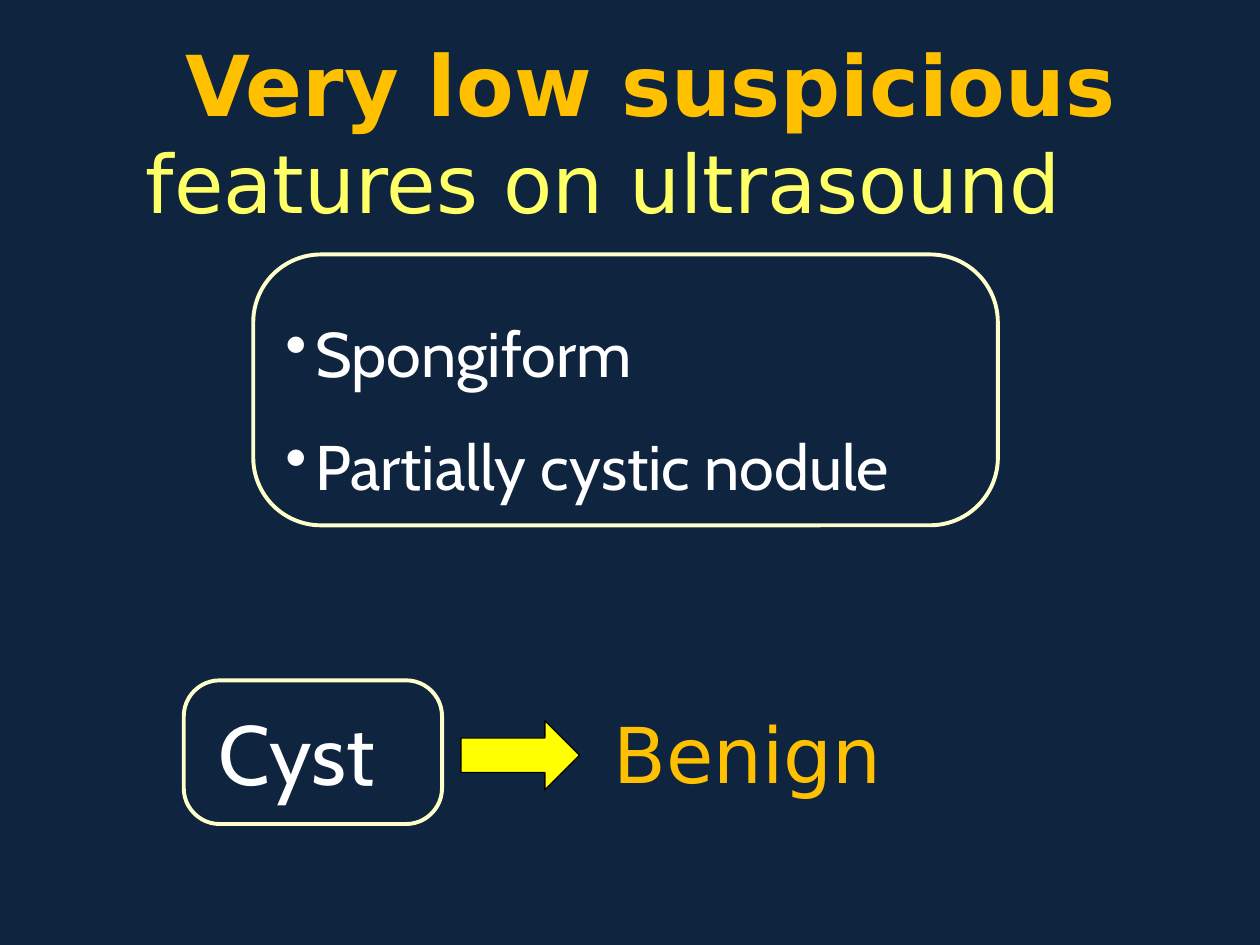
from lxml import etree
from pptx import Presentation
from pptx import util as u
from pptx.dml import color
from pptx.enum import shapes, text
from pptx.oxml import ns

SANS = "DejaVu Sans"
CABIN = "Cabin"
WHITE = "FFFFFF"
CREAM = "FFFFCC"
AMBER = "FFC000"


def rgb(value):
    return color.RGBColor.from_string(value)


class SlideWriter:
    def __init__(self, page, background):
        self.page = page
        fill = page.background.fill
        fill.solid()
        fill.fore_color.rgb = rgb(background)

    def place(self, left, top, width, height):
        return [u.Pt(length) for length in (left, top, width, height)]

    def shape(self, kind, area, line, weight, fill=None):
        shape = self.page.shapes.add_shape(kind, *self.place(*area))
        shape.shadow.inherit = False
        shape.line.color.rgb = rgb(line)
        shape.line.width = u.Pt(weight)
        if fill:
            shape.fill.solid()
            shape.fill.fore_color.rgb = rgb(fill)
        else:
            shape.fill.background()
        return shape

    def rounded_box(self, area):
        box = self.shape(shapes.MSO_SHAPE.ROUNDED_RECTANGLE, area, CREAM, 2.25)
        box.adjustments[0] = 0.25
        box.text_frame.vertical_anchor = text.MSO_ANCHOR.MIDDLE
        box.text_frame.word_wrap = True
        return box.text_frame

    def text_box(self, area):
        frame = self.page.shapes.add_textbox(*self.place(*area)).text_frame
        frame.word_wrap = True
        return frame

    def paragraph(self, frame, words, size, shade, face, bold=False, indent=0):
        para = frame.paragraphs[0]
        if para.runs:
            para = frame.add_paragraph()
        para.alignment = text.PP_ALIGN.LEFT
        para.add_run().text = words
        font = para.font
        font.size, font.name, font.bold = u.Pt(size), face, bold
        font.color.rgb = rgb(shade)
        if indent:
            para._p.get_or_add_pPr().set("indent", str(u.Pt(indent)))
        return para

    def bullet(self, frame, words, size, shade, face, hang):
        para = self.paragraph(frame, words, size, shade, face, indent=-hang)
        para.line_spacing = 1.5
        properties = para._p.get_or_add_pPr()
        properties.set("marL", str(u.Pt(hang)))
        mark = etree.Element(ns.qn("a:buChar"), char="•")
        properties.find(ns.qn("a:defRPr")).addprevious(mark)


def main():
    deck = Presentation()
    deck.slide_width, deck.slide_height = u.Pt(720), u.Pt(540)
    writer = SlideWriter(deck.slides.add_slide(deck.slide_layouts[6]), "0F243E")

    features = writer.rounded_box((144.7, 145.4, 425.5, 154.8))
    for feature in ("Spongiform", "Partially cystic nodule"):
        writer.bullet(features, feature, 36, WHITE, CABIN, hang=17)

    title = writer.text_box((76.3, 15.1, 595.4, 121))
    writer.paragraph(title, "Very low suspicious", 48, AMBER, SANS, True, indent=22.5)
    writer.paragraph(title, "features on ultrasound", 46, "FFFF66", SANS)

    verdict = writer.text_box((343.4, 400.3, 187.2, 60.5))
    writer.paragraph(verdict, "Benign", 44, AMBER, SANS)

    cyst = writer.rounded_box((105, 388.8, 147.6, 82.1))
    writer.paragraph(cyst, "Cyst", 48, WHITE, CABIN, indent=6.5)

    writer.shape(shapes.MSO_SHAPE.RIGHT_ARROW, (263.5, 411.8, 67.7, 39.6),
                 "000000", 0.75, "FFFF00")
    deck.save("out.pptx")


if __name__ == "__main__":
    main()
